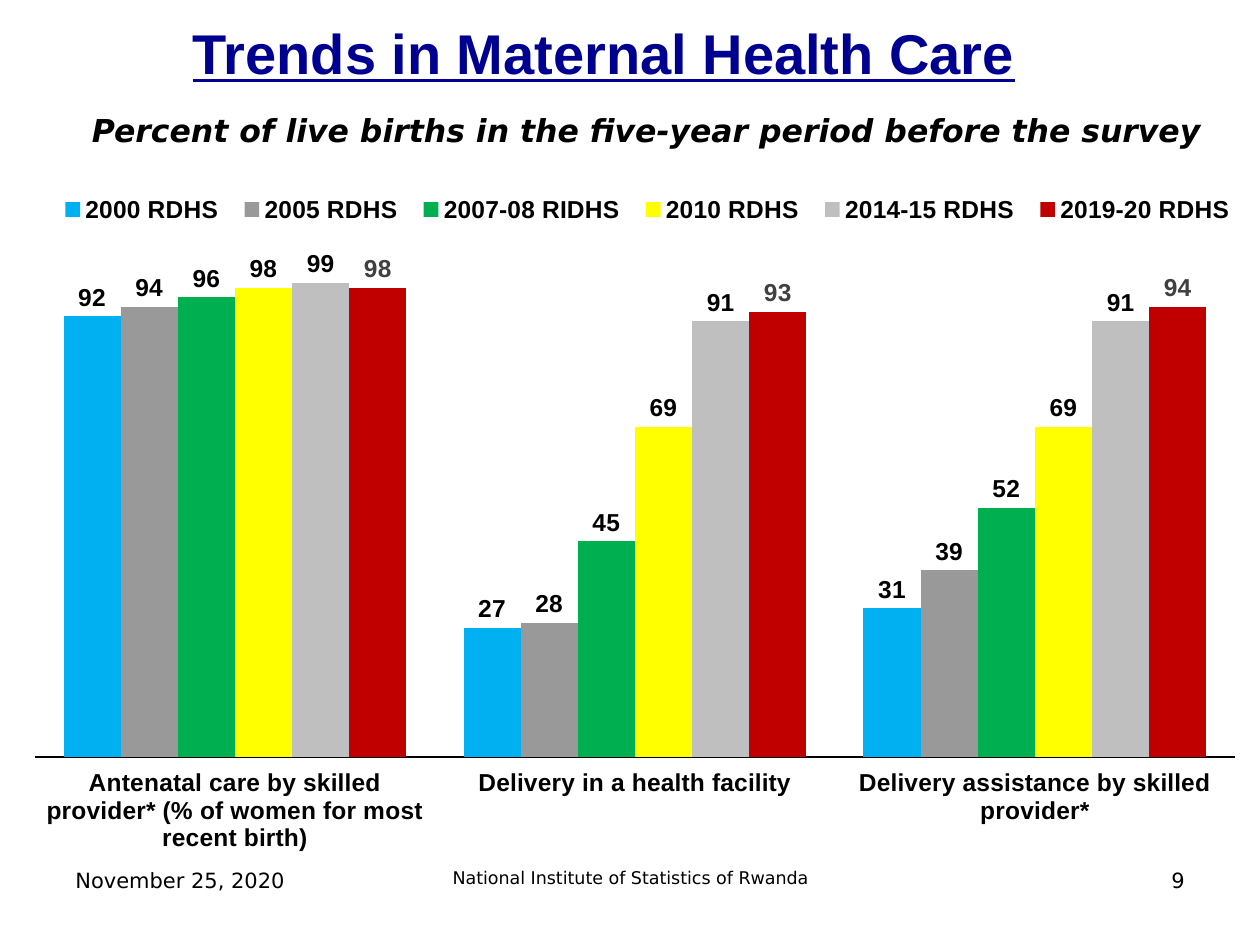
from dataclasses import dataclass

from lxml.etree import SubElement
from pptx import Presentation
from pptx.chart.data import CategoryChartData
from pptx.dml.color import RGBColor
from pptx.enum.chart import XL_CHART_TYPE as ChartType
from pptx.enum.chart import XL_LABEL_POSITION as LabelPosition
from pptx.enum.chart import XL_LEGEND_POSITION as LegendPosition
from pptx.enum.chart import XL_TICK_LABEL_POSITION as TickLabels
from pptx.enum.chart import XL_TICK_MARK as TickMark
from pptx.enum.text import MSO_ANCHOR as Anchor
from pptx.enum.text import PP_ALIGN as Align
from pptx.oxml.ns import qn
from pptx.util import Emu, Pt

PX_PER_INCH = 126


@dataclass(frozen=True)
class Theme:
    heading_font: str = "Arial"
    body_font: str = "DejaVu Sans"
    title_color: str = "000090"
    text_color: str = "000000"
    latest_color: str = "404040"
    title_size: int = 32
    subtitle_size: int = 18
    chart_size: int = 14
    footer_size: int = 12
    institute_size: int = 10


THEME = Theme()

CATEGORIES = (
    "Antenatal care by skilled provider* (% of women for most recent birth)",
    "Delivery in a health facility",
    "Delivery assistance by skilled provider*",
)
# Survey, values, bar colour, label colour
SURVEYS = (
    ("2000 RDHS", (92, 27, 31), "00B0F0", THEME.text_color),
    ("2005 RDHS", (94, 28, 39), "999999", THEME.text_color),
    ("2007-08 RIDHS", (96, 45, 52), "00B050", THEME.text_color),
    ("2010 RDHS", (98, 69, 69), "FFFF00", THEME.text_color),
    ("2014-15 RDHS", (99, 91, 91), "BFBFBF", THEME.text_color),
    ("2019-20 RDHS", (98, 93, 94), "C00000", THEME.latest_color),
)


def px(length):
    return Emu(round(length * 914400 / PX_PER_INCH))


def style_font(font, size, color=THEME.text_color, name=THEME.heading_font,
               bold=False, italic=False, underline=False):
    font.name = name
    font.size = Pt(size)
    font.color.rgb = RGBColor.from_string(color)
    font.bold = bold
    font.italic = italic
    font.underline = underline


def add_text(slide, box, text, size, align=Align.LEFT, anchor=Anchor.TOP, **style):
    shape = slide.shapes.add_textbox(*map(px, box))
    frame = shape.text_frame
    frame.word_wrap = True
    frame.vertical_anchor = anchor
    paragraph = frame.paragraphs[0]
    paragraph.alignment = align
    run = paragraph.add_run()
    run.text = text
    style_font(run.font, size, **style)


def set_layout(parent, before, fractions, inner=False):
    """Place a chart part by fractions of the chart, ahead of the given child."""
    for old in parent.findall(qn("c:layout")):
        parent.remove(old)
    layout = SubElement(parent, qn("c:layout"))
    manual = SubElement(layout, qn("c:manualLayout"))
    settings = [("layoutTarget", "inner")] if inner else []
    settings += [("xMode", "edge"), ("yMode", "edge")]
    settings += zip("xywh", map(str, fractions))
    for tag, value in settings:
        SubElement(manual, qn(f"c:{tag}")).set("val", value)
    parent.find(qn(before)).addprevious(layout)


def style_axes(chart):
    category_axis = chart.category_axis
    category_axis.major_tick_mark = TickMark.NONE
    category_axis.minor_tick_mark = TickMark.NONE
    category_axis.tick_label_position = TickLabels.LOW
    category_axis.format.line.color.rgb = RGBColor.from_string(THEME.text_color)
    category_axis.format.line.width = Pt(0.75)
    style_font(category_axis.tick_labels.font, THEME.chart_size, bold=True)

    value_axis = chart.value_axis
    value_axis.minimum_scale = 0
    value_axis.maximum_scale = 110
    value_axis.has_major_gridlines = False
    value_axis.visible = False


def style_series(series, bar_color, label_color):
    series.format.fill.solid()
    series.format.fill.fore_color.rgb = RGBColor.from_string(bar_color)
    series.format.line.fill.background()
    series.invert_if_negative = False
    labels = series.data_labels
    labels.show_value = True
    labels.position = LabelPosition.OUTSIDE_END
    style_font(labels.font, THEME.chart_size, label_color, bold=True)


def add_survey_chart(slide, box):
    data = CategoryChartData(number_format="0")
    data.categories = CATEGORIES
    for name, values, _, _ in SURVEYS:
        data.add_series(name, values)
    chart = slide.shapes.add_chart(
        ChartType.COLUMN_CLUSTERED, *map(px, box), data).chart
    chart.has_title = False
    style_font(chart.font, THEME.chart_size)

    plot = chart.plots[0]
    plot.gap_width = 100
    plot.overlap = 0
    plot.vary_by_categories = False
    for series, (_, _, bar_color, label_color) in zip(plot.series, SURVEYS):
        style_series(series, bar_color, label_color)
    style_axes(chart)

    chart.has_legend = True
    legend = chart.legend
    legend.position = LegendPosition.TOP
    legend.include_in_layout = False
    style_font(legend.font, THEME.chart_size, bold=True)

    plot_area = chart.element.find(f".//{qn('c:plotArea')}")
    legend_element = chart.element.find(f".//{qn('c:legend')}")
    set_layout(plot_area, "c:barChart", (0.02, 0.09, 0.96, 0.76), inner=True)
    set_layout(legend_element, "c:overlay", (0.03, 0.03, 0.96, 0.06))


def add_footer(slide):
    top, height = 861, 65
    add_text(slide, (63, top, 294, height), "November 25, 2020",
             THEME.footer_size, name=THEME.body_font)
    add_text(slide, (431, top, 399, height),
             "National Institute of Statistics of Rwanda",
             THEME.institute_size, Align.CENTER, name=THEME.body_font)
    add_text(slide, (903, top, 294, height), "9",
             THEME.footer_size, Align.RIGHT, name=THEME.body_font)


def main():
    presentation = Presentation()
    presentation.slide_width = px(1260)
    presentation.slide_height = px(945)
    slide = presentation.slides.add_slide(presentation.slide_layouts[6])

    add_footer(slide)
    add_text(slide, (116, 21, 976, 63), "Trends in Maternal Health Care",
             THEME.title_size, Align.CENTER, Anchor.MIDDLE,
             color=THEME.title_color, bold=True, underline=True)
    add_survey_chart(slide, (10, 168, 1250, 693))
    add_text(slide, (73, 105, 1147, 50),
             "Percent of live births in the five-year period before the survey",
             THEME.subtitle_size, Align.CENTER, name=THEME.body_font,
             bold=True, italic=True)

    presentation.save("out.pptx")


if __name__ == "__main__":
    main()
